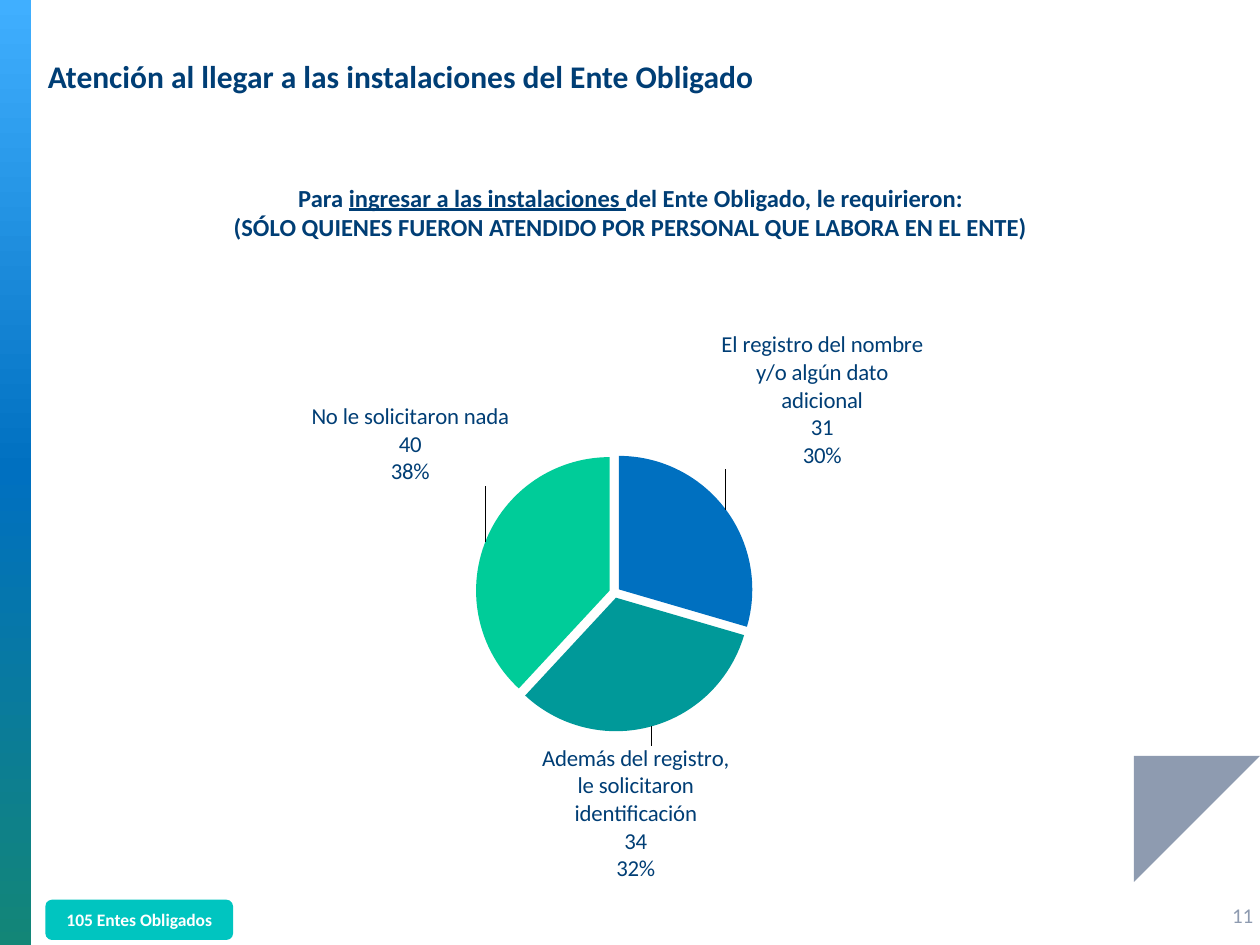
from dataclasses import dataclass

from lxml.etree import SubElement
from pptx import Presentation
from pptx.chart.data import CategoryChartData
from pptx.dml.color import RGBColor
from pptx.enum.chart import XL_CHART_TYPE as ChartType, XL_LABEL_POSITION as LabelPosition
from pptx.enum.shapes import MSO_SHAPE as Shape
from pptx.enum.text import MSO_ANCHOR as Anchor, MSO_AUTO_SIZE as AutoSize, PP_ALIGN as Align
from pptx.oxml.ns import qn
from pptx.util import Inches, Pt


@dataclass(frozen=True)
class Theme:
    font: str = "Calibri"
    navy: str = "003E75"
    gray: str = "8E9BB0"
    turquoise: str = "00C5C0"
    white: str = "FFFFFF"
    bar: tuple = ((0, "40AFFF"), (50, "0070C0"), (100, "138677"))
    slices: tuple = ("0070C0", "009999", "00CC99")
    title: int = 18
    question: int = 14
    chart: int = 13
    number: int = 12
    badge: int = 10


theme = Theme()


def add_run(paragraph, text, size, color, bold=True, underline=None):
    run = paragraph.add_run()
    run.text = text
    run.font.name = theme.font
    run.font.size = Pt(size)
    run.font.bold = bold
    run.font.underline = underline
    run.font.color.rgb = RGBColor.from_string(color)


def add_values(parent, **values):
    for tag, value in values.items():
        SubElement(parent, qn(f"c:{tag}")).set("val", str(value))


presentation = Presentation()
presentation.slide_width = Inches(10)
presentation.slide_height = Inches(7.5)
slide = presentation.slides.add_slide(presentation.slide_layouts[5])
shapes = slide.shapes

bar = shapes.add_shape(Shape.RECTANGLE, 0, 0, Inches(0.25), Inches(7.5))
bar.shadow.inherit = False
bar.line.fill.background()
bar.fill.gradient()
bar.fill.gradient_angle = 270
stops = bar._element.spPr.find(qn("a:gradFill")).find(qn("a:gsLst"))
for stop in list(stops):
    stops.remove(stop)
for position, color in theme.bar:
    stop = SubElement(stops, qn("a:gs"), pos=str(position * 1000))
    SubElement(stop, qn("a:srgbClr"), val=color)

builder = shapes.build_freeform(9.35, 6.25, scale=Inches(1))
builder.add_line_segments([(9.24, 6.25), (9.4, 6.49), (9.24, 6.72), (9.35, 6.72), (9.51, 6.49)])
chevron = builder.convert_to_shape()
chevron.shadow.inherit = False
chevron.fill.solid()
chevron.fill.fore_color.rgb = RGBColor.from_string(theme.gray)
chevron.line.fill.background()

number = shapes.add_textbox(Inches(9.68), Inches(7.06), Inches(0.42), Inches(0.4))
number.text_frame.word_wrap = True
number.text_frame.vertical_anchor = Anchor.MIDDLE
add_run(number.text_frame.paragraphs[0], "11", theme.number, theme.gray, bold=False)

question = shapes.add_textbox(Inches(0.95), Inches(1.4), Inches(8.11), Inches(0.57))
question.text_frame.word_wrap = True
question.text_frame.auto_size = AutoSize.SHAPE_TO_FIT_TEXT
paragraph = question.text_frame.paragraphs[0]
paragraph.alignment = Align.CENTER
add_run(paragraph, "Para ", theme.question, theme.navy)
add_run(paragraph, "ingresar a las instalaciones ", theme.question, theme.navy, underline=True)
add_run(paragraph, "del Ente Obligado, le requirieron:", theme.question, theme.navy)
paragraph = question.text_frame.add_paragraph()
paragraph.alignment = Align.CENTER
add_run(paragraph, "(SÓLO QUIENES FUERON ATENDIDO POR PERSONAL QUE LABORA EN EL ENTE)",
        theme.question, theme.navy)

answers = CategoryChartData()
answers.categories = [
    "El registro del nombre y/o algún dato adicional",
    "Además del registro, le solicitaron identificación",
    "No le solicitaron nada",
]
answers.add_series("Series 1", (31, 34, 40))
chart = shapes.add_chart(ChartType.PIE, Inches(1.06), Inches(2.49), Inches(8.03), Inches(4.65),
                         answers).chart
chart.has_legend = False
chart.has_title = False
chart.font.name = theme.font
chart.font.size = Pt(theme.chart)
chart.font.bold = False
chart.font.color.rgb = RGBColor.from_string(theme.navy)

plot_area = chart._chartSpace.chart.plotArea
for layout in plot_area.findall(qn("c:layout")):
    plot_area.remove(layout)
layout = SubElement(plot_area, qn("c:layout"))
plot_area.insert(0, layout)
add_values(SubElement(layout, qn("c:manualLayout")), layoutTarget="inner", xMode="edge",
           yMode="edge", x=0.236, y=0.239, w=0.479, h=0.474)

chart.plots[0].vary_by_categories = True
series = chart.plots[0].series[0]
for index, color in enumerate(theme.slices):
    fill = series.points[index].format.fill
    fill.solid()
    fill.fore_color.rgb = RGBColor.from_string(color)
add_values(series._element, explosion=4)
series._element.find(qn("c:tx")).addnext(series._element.find(qn("c:explosion")))

labels = series.data_labels
labels.show_value = True
labels.show_category_name = True
labels.show_percentage = True
labels.position = LabelPosition.OUTSIDE_END
label_offsets = ((-0.01, -0.06), (-0.11, 0.02), (0.03, -0.09))
for index, (x, y) in enumerate(label_offsets):
    label = SubElement(labels._element, qn("c:dLbl"))
    labels._element.insert(index, label)
    add_values(label, idx=index)
    layout = SubElement(label, qn("c:layout"))
    add_values(SubElement(layout, qn("c:manualLayout")), x=x, y=y)
    add_values(label, dLblPos="outEnd", showLegendKey=0, showVal=1, showCatName=1,
               showSerName=0, showPercent=1, showBubbleSize=0)
    SubElement(label, qn("c:separator")).text = "\n"

title = shapes.title
title.left, title.top, title.width, title.height = map(Inches, (0.28, 0.13, 9.29, 0.94))
title.text_frame.word_wrap = True
title.text_frame.auto_size = AutoSize.NONE
title.text_frame.vertical_anchor = Anchor.MIDDLE
paragraph = title.text_frame.paragraphs[0]
paragraph.alignment = Align.LEFT
add_run(paragraph, "Atención al llegar a las instalaciones del Ente Obligado",
        theme.title, theme.navy)

badge = shapes.add_shape(Shape.ROUNDED_RECTANGLE, Inches(0.36), Inches(7.14), Inches(1.49),
                         Inches(0.32))
badge.shadow.inherit = False
badge.fill.solid()
badge.fill.fore_color.rgb = RGBColor.from_string(theme.turquoise)
badge.line.fill.background()
badge.text_frame.word_wrap = True
badge.text_frame.vertical_anchor = Anchor.MIDDLE
paragraph = badge.text_frame.paragraphs[0]
paragraph.alignment = Align.CENTER
add_run(paragraph, "105 Entes Obligados", theme.badge, theme.white)

presentation.save("out.pptx")
